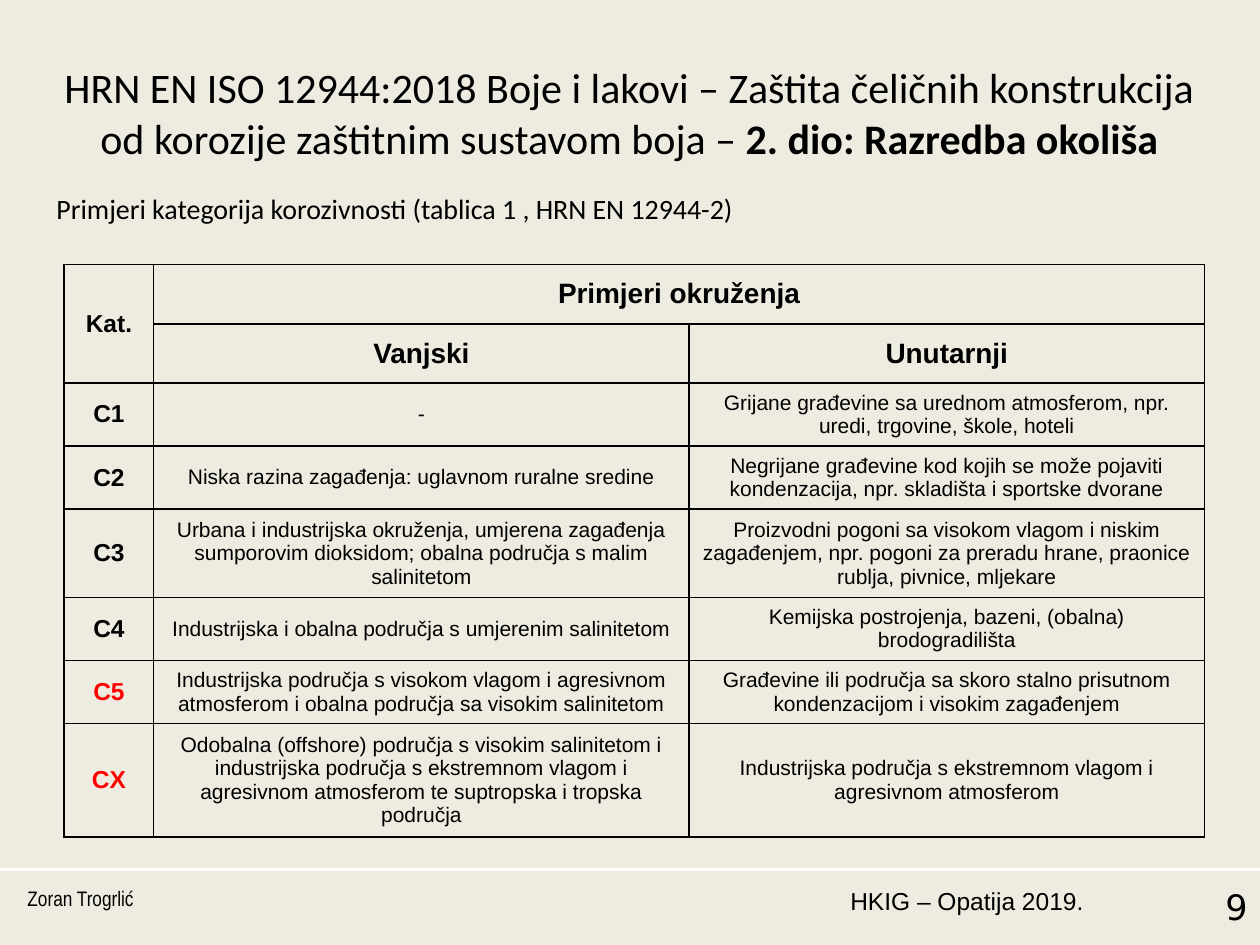
from lxml import etree
from pptx import Presentation
from pptx.dml.color import RGBColor
from pptx.enum.shapes import MSO_CONNECTOR
from pptx.enum.text import MSO_ANCHOR, PP_ALIGN
from pptx.oxml.ns import qn
from pptx.util import Inches, Pt

LEFT, CENTER, RIGHT = PP_ALIGN.LEFT, PP_ALIGN.CENTER, PP_ALIGN.RIGHT
MIDDLE = MSO_ANCHOR.MIDDLE
STRAIGHT = MSO_CONNECTOR.STRAIGHT
BLACK = RGBColor(0, 0, 0)
RED = RGBColor(255, 0, 0)
WHITE = RGBColor(255, 255, 255)
CREAM = RGBColor(0xEE, 0xEC, 0xE1)

TITLE = [
    ("HRN EN ISO 12944:2018 Boje i lakovi – Zaštita čeličnih konstrukcija "
     "od korozije zaštitnim sustavom boja – ", False),
    ("2. dio: Razredba okoliša", True),
]
SUBTITLE = "Primjeri kategorija korozivnosti (tablica 1 , HRN EN 12944-2)"
HEADERS = [("Kat.", "Primjeri okruženja", ""), ("", "Vanjski", "Unutarnji")]
CATEGORIES = [
    ("C1", "-",
     "Grijane građevine sa urednom atmosferom, npr. uredi, trgovine, škole, hoteli"),
    ("C2", "Niska razina zagađenja: uglavnom ruralne sredine",
     "Negrijane građevine kod kojih se može pojaviti kondenzacija, "
     "npr. skladišta i sportske dvorane"),
    ("C3", "Urbana i industrijska okruženja, umjerena zagađenja sumporovim dioksidom; "
     "obalna područja s malim salinitetom",
     "Proizvodni pogoni sa visokom vlagom i niskim zagađenjem, "
     "npr. pogoni za preradu hrane, praonice rublja, pivnice, mljekare"),
    ("C4", "Industrijska i obalna područja s umjerenim salinitetom",
     "Kemijska postrojenja, bazeni, (obalna) brodogradilišta"),
    ("C5", "Industrijska područja s visokom vlagom i agresivnom atmosferom "
     "i obalna područja sa visokim salinitetom",
     "Građevine ili područja sa skoro stalno prisutnom kondenzacijom "
     "i visokim zagađenjem"),
    ("CX", "Odobalna (offshore) područja s visokim salinitetom i industrijska područja "
     "s ekstremnom vlagom i agresivnom atmosferom te suptropska i tropska područja",
     "Industrijska područja s ekstremnom vlagom i agresivnom atmosferom"),
]
SEVERE = ("C5", "CX")
COL_WIDTHS = (0.71, 4.25, 4.09)
HEADER_HEIGHT, ROW_HEIGHT = 0.47, 0.41
TABLE_LEFT, TABLE_TOP = 0.51, 2.1
FOOTER_LINE, FOOTER_TOP, FOOTER_HEIGHT = 6.9, 6.98, 0.52
FOOTERS = [
    ("HKIG – Opatija 2019.", 6.57, 2.13, dict(size=14, font="Arial", align=RIGHT)),
    ("Zoran Trogrlić", 0.12, 2.17, dict(size=12, font="Arial Narrow")),
    ("9", 8.78, 1.22, dict(size=20, font="DejaVu Sans", align=RIGHT)),
]


def write(tf, text, size=12, font="Arial", color=BLACK, bold=False, align=LEFT):
    p = tf.paragraphs[0]
    p.alignment = align
    runs = [(text, bold)] if isinstance(text, str) else text
    for words, heavy in runs:
        r = p.add_run()
        r.text = words
        r.font.size = Pt(size)
        r.font.name = font
        r.font.bold = heavy
        r.font.color.rgb = color


def add_text(s, text, left, top, width, height, **fmt):
    box = s.shapes.add_textbox(*map(Inches, (left, top, width, height)))
    box.text_frame.word_wrap = True
    write(box.text_frame, text, **fmt)


def add_borders(cell):
    tc_pr = cell._tc.get_or_add_tcPr()
    for i, side in enumerate(("a:lnL", "a:lnR", "a:lnT", "a:lnB")):
        ln = etree.Element(qn(side), w=str(Pt(1)))
        fill = etree.SubElement(ln, qn("a:solidFill"))
        etree.SubElement(fill, qn("a:srgbClr"), val=str(BLACK))
        tc_pr.insert(i, ln)


def cell_format(row, col, text):
    if row < len(HEADERS):
        return dict(size=16 if col else 14, bold=True)
    if col == 0:
        return dict(size=14, bold=True, color=RED if text in SEVERE else BLACK)
    return dict(size=12)


def add_category_table(s):
    rows = HEADERS + CATEGORIES
    heights = [HEADER_HEIGHT] * len(HEADERS) + [ROW_HEIGHT] * len(CATEGORIES)
    frame = s.shapes.add_table(
        len(rows), len(COL_WIDTHS), Inches(TABLE_LEFT), Inches(TABLE_TOP),
        Inches(sum(COL_WIDTHS)), Inches(sum(heights)))
    table = frame.table
    table.first_row = table.horz_banding = False
    for column, width in zip(table.columns, COL_WIDTHS):
        column.width = Inches(width)
    for i, (texts, height) in enumerate(zip(rows, heights)):
        table.rows[i].height = Inches(height)
        for j, text in enumerate(texts):
            cell = table.cell(i, j)
            cell.fill.background()
            cell.vertical_anchor = MIDDLE
            add_borders(cell)
            if text:
                write(cell.text_frame, text, align=CENTER, **cell_format(i, j, text))
    table.cell(0, 0).merge(table.cell(1, 0))
    table.cell(0, 1).merge(table.cell(0, 2))


def main():
    prs = Presentation()
    prs.slide_width, prs.slide_height = Inches(10), Inches(7.5)
    s = prs.slides.add_slide(prs.slide_layouts[6])
    s.background.fill.solid()
    s.background.fill.fore_color.rgb = CREAM

    rule = s.shapes.add_connector(
        STRAIGHT, 0, Inches(FOOTER_LINE), prs.slide_width, Inches(FOOTER_LINE))
    rule.line.color.rgb = WHITE
    rule.line.width = Pt(1.5)
    etree.SubElement(rule._element.spPr, qn("a:effectLst"))

    for text, left, width, fmt in FOOTERS:
        add_text(s, text, left, FOOTER_TOP, width, FOOTER_HEIGHT, **fmt)
    add_text(s, SUBTITLE, 0.35, 1.47, 9, 4.95, size=16, font="Calibri")
    add_category_table(s)
    add_text(s, TITLE, 0.35, 0.44, 9.29, 1.25, size=24, font="Calibri", align=CENTER)
    prs.save("out.pptx")


if __name__ == "__main__":
    main()
